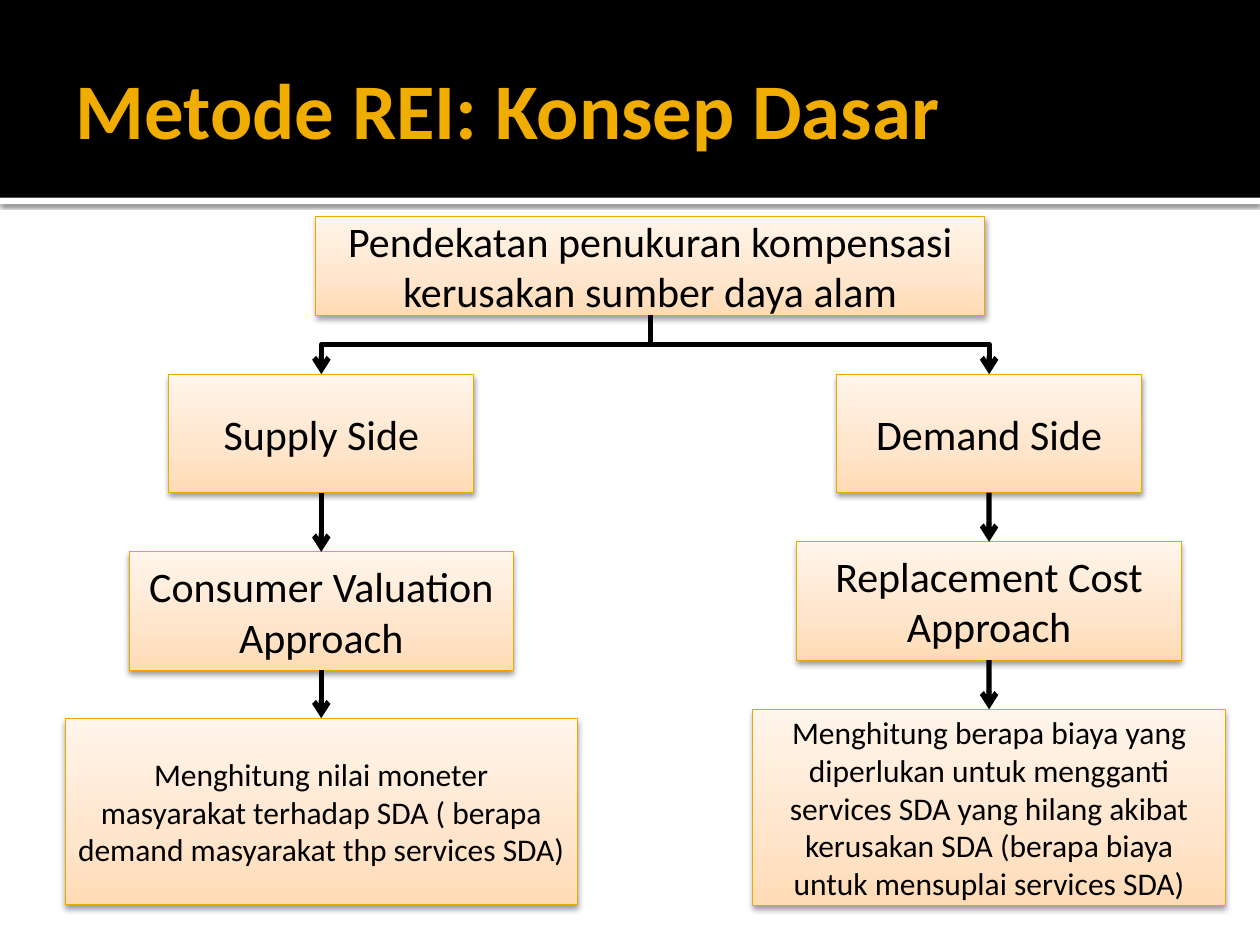
from dataclasses import dataclass
from lxml import etree
from pptx import Presentation
from pptx.dml.color import RGBColor
from pptx.enum.shapes import MSO_CONNECTOR as LINK, MSO_SHAPE as SHAPE
from pptx.enum.text import MSO_ANCHOR as ANCHOR, PP_ALIGN as ALIGN
from pptx.oxml import parse_xml
from pptx.oxml.ns import nsdecls, qn
from pptx.util import Inches, Pt


@dataclass(frozen=True)
class Theme:
    font: str = "Calibri"
    title_size: int = 45
    heading_size: int = 24
    detail_size: int = 18
    black: str = "000000"
    white: str = "FFFFFF"
    title: str = "F0AD00"
    border: str = "EBA900"
    gradient: tuple = ((0, "FFDBB5"), (35, "FFE5CB"), (100, "FFF5EB"))


theme = Theme()


def add_rect(left, top, width, height, blur=0, distance=0, opacity=0):
    """Rectangle with an optional downward shadow."""
    rect = slide.shapes.add_shape(
        SHAPE.RECTANGLE, Inches(left), Inches(top), Inches(width), Inches(height))
    rect.shadow.inherit = False
    if blur:
        effects = rect._element.spPr.find(qn("a:effectLst"))
        effects.append(parse_xml(
            f'<a:outerShdw {nsdecls("a")} blurRad="{Pt(blur)}" dist="{Pt(distance)}" '
            f'dir="5400000" rotWithShape="0"><a:srgbClr val="{theme.black}">'
            f'<a:alpha val="{opacity * 1000}"/></a:srgbClr></a:outerShdw>'))
    return rect


def style_arrow(arrow):
    arrow.line.color.rgb = RGBColor.from_string(theme.black)
    arrow.line.width = Pt(3)
    etree.SubElement(arrow.line._get_or_add_ln(), qn("a:tailEnd"), type="arrow")
    etree.SubElement(arrow._element.spPr, qn("a:effectLst"))


prs = Presentation()
prs.slide_width, prs.slide_height = Inches(10), Inches(7.5)
slide = prs.slides.add_slide(prs.slide_layouts[5])

# Header: white rule below a black band
rule = add_rect(0, 1.57, 10, 0.05, blur=2.5, distance=0.8, opacity=60)
band = add_rect(0, 0, 10, 1.57)
for strip, color in ((rule, theme.white), (band, theme.black)):
    strip.fill.solid()
    strip.fill.fore_color.rgb = RGBColor.from_string(color)
    strip.line.fill.background()

# Title, brought in front of the band
title = slide.shapes.title
title._element.getparent().append(title._element)
title.left, title.top = Inches(0.5), Inches(0.17)
title.width, title.height = Inches(9), Inches(1.37)
frame = title.text_frame
frame.text = "Metode REI: Konsep Dasar"
frame.vertical_anchor = ANCHOR.MIDDLE
frame.margin_right = Inches(0.05)
heading = frame.paragraphs[0]
heading.alignment = ALIGN.LEFT
heading.font.name, heading.font.size = theme.font, Pt(theme.title_size)
heading.font.bold = True
heading.font.color.rgb = RGBColor.from_string(theme.title)

# Boxes: centre, top, width, height, type size, text; the root, then two columns
root_x, root_bottom, branch_top = 5.16, 2.5, 2.97
supply_x, demand_x = 2.55, 7.85
big, small = theme.heading_size, theme.detail_size
root_spec = [(root_x, 1.72, 5.31, 0.78, big,
              "Pendekatan penukuran kompensasi kerusakan sumber daya alam")]
supply_specs = [
    (supply_x, branch_top, 2.42, 0.94, big, "Supply Side"),
    (supply_x, 4.38, 3.05, 0.94, big, "Consumer Valuation Approach"),
    (supply_x, 5.7, 4.06, 1.48, small,
     "Menghitung nilai moneter masyarakat terhadap SDA ( berapa demand "
     "masyarakat thp services SDA)"),
]
demand_specs = [
    (demand_x, branch_top, 2.42, 0.94, big, "Demand Side"),
    (demand_x, 4.3, 3.05, 0.94, big, "Replacement Cost Approach"),
    (demand_x, 5.63, 3.75, 1.56, small,
     "Menghitung berapa biaya yang diperlukan untuk mengganti services SDA "
     "yang hilang akibat kerusakan SDA (berapa biaya untuk mensuplai services SDA)"),
]
stops = "".join(f'<a:gs pos="{pos * 1000}"><a:srgbClr val="{color}"/></a:gs>'
                for pos, color in theme.gradient)

for specs in (root_spec, supply_specs, demand_specs):
    above = None
    for center, top, width, height, size, text in specs:
        box = add_rect(center - width / 2, top, width, height,
                       blur=3.5, distance=2, opacity=38)
        box.fill.gradient()
        gradient = box._element.spPr.find(qn("a:gradFill"))
        gradient.getparent().replace(gradient, parse_xml(
            f'<a:gradFill {nsdecls("a")} rotWithShape="1"><a:gsLst>{stops}</a:gsLst>'
            '<a:lin ang="16200000" scaled="1"/></a:gradFill>'))
        box.line.color.rgb = RGBColor.from_string(theme.border)
        box.line.width = Pt(0.5)
        box.text_frame.text = text
        box.text_frame.word_wrap = True
        box.text_frame.vertical_anchor = ANCHOR.MIDDLE
        label = box.text_frame.paragraphs[0]
        label.alignment = ALIGN.CENTER
        label.font.name, label.font.size = theme.font, Pt(size)
        label.font.color.rgb = RGBColor.from_string(theme.black)

        # Straight arrow from the box above in the same column
        if above is not None:
            arrow = slide.shapes.add_connector(LINK.STRAIGHT, 0, 0, 0, 0)
            arrow.begin_connect(above, 2)
            arrow.end_connect(box, 0)
            style_arrow(arrow)
        above = box

# Elbow arrows from the root, laid out sideways and then turned downwards
drop = branch_top - root_bottom
middle_y = (root_bottom + branch_top) / 2
for column_x, direction, turn in ((supply_x, 1, 90), (demand_x, -1, 270)):
    middle_x = (root_x + column_x) / 2
    half_run = abs(column_x - root_x) / 2
    half_drop = direction * drop / 2
    elbow = slide.shapes.add_connector(
        LINK.ELBOW, Inches(middle_x - half_drop), Inches(middle_y - half_run),
        Inches(middle_x + half_drop), Inches(middle_y + half_run))
    elbow._element.spPr.find(qn("a:xfrm")).set("rot", str(turn * 60000))
    style_arrow(elbow)

prs.save("out.pptx")
